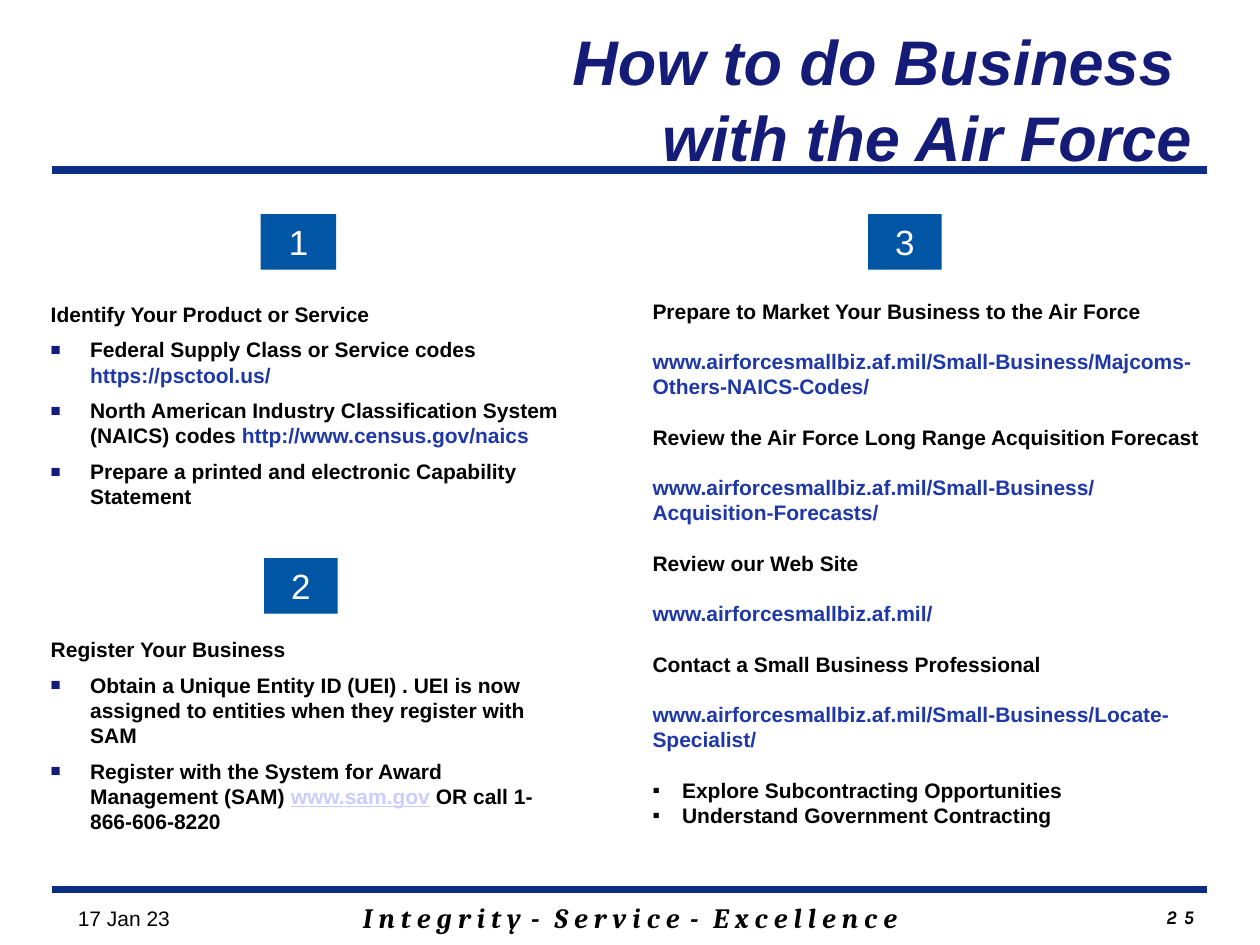
"""Build the "How to do Business with the Air Force" slide."""
from lxml.etree import SubElement
from pptx import Presentation
from pptx.dml.color import RGBColor
from pptx.enum.shapes import MSO_CONNECTOR as CONN, MSO_SHAPE as SHAPE
from pptx.enum.text import MSO_ANCHOR as ANCHOR, MSO_AUTO_SIZE as AUTO, PP_ALIGN as ALIGN
from pptx.oxml.ns import qn
from pptx.util import Pt

COLORS = {"navy": "151C77", "rule": "0C2D83", "box": "0055A5", "link": "1E38A8",
          "pale": "CCCCFF", "black": "000000", "white": "FFFFFF"}


def rgb(name):
    return RGBColor.from_string(COLORS[name])


class Deck:
    font = "Arial"
    size = 12

    def __init__(self, slide):
        self.slide = slide

    def style(self, r, size=None, color="black", font=None, bold=False, italic=False,
              underline=False, spacing=0):
        f = r.font
        f.name, f.size = font or self.font, Pt(size or self.size)
        f.bold, f.italic = bold, italic
        f.color.rgb = rgb(color)
        if underline:
            f.underline = True
        if spacing:
            r._r.get_or_add_rPr().set("spc", str(int(spacing * 100)))

    def title(self, text, x, y, w, h):
        sp = self.slide.shapes.title
        sp.left, sp.top, sp.width, sp.height = map(Pt, (x, y, w, h))
        tf = sp.text_frame
        tf.text = text
        tf.auto_size, tf.vertical_anchor = AUTO.NONE, ANCHOR.MIDDLE
        p = tf.paragraphs[0]
        p.alignment = ALIGN.RIGHT
        for r in p.runs:
            self.style(r, 36, "navy", bold=True, italic=True)

    def rule(self, y, x1=30, x2=690):
        cx = self.slide.shapes.add_connector(CONN.STRAIGHT, Pt(x1), Pt(y), Pt(x2), Pt(y))
        cx.line.color.rgb, cx.line.width = rgb("rule"), Pt(4.5)
        SubElement(cx._element.spPr, qn("a:effectLst"))

    def frame(self, x, y, w, h, wrap=True, inset=None):
        tf = self.slide.shapes.add_textbox(*map(Pt, (x, y, w, h))).text_frame
        tf.word_wrap = wrap
        if inset:
            tf.margin_left = tf.margin_right = Pt(inset[0])
            tf.margin_top = tf.margin_bottom = Pt(inset[1])
        return tf

    def label(self, runs, x, y, w, h, align=ALIGN.CENTER, wrap=True):
        p = self.frame(x, y, w, h, wrap).paragraphs[0]
        p.alignment = align
        for text, look in runs:
            r = p.add_run()
            r.text = text
            self.style(r, **look)

    def number(self, text, x, y, w=42, h=31.7):
        sp = self.slide.shapes.add_shape(SHAPE.RECTANGLE, *map(Pt, (x, y, w, h)))
        sp.shadow.inherit = False
        sp.fill.solid()
        sp.fill.fore_color.rgb = rgb("box")
        sp.line.fill.background()
        sp.text_frame.text = text
        p = sp.text_frame.paragraphs[0]
        p.alignment = ALIGN.CENTER
        self.style(p.runs[0], 20, "white")

    def bullet(self, p, char, indent, color=None, percent=None):
        pPr = p._p.get_or_add_pPr()
        pPr.set("marL", str(Pt(indent)))
        pPr.set("indent", str(-Pt(indent)))
        if color:
            SubElement(SubElement(pPr, qn("a:buClr")), qn("a:srgbClr")).set("val", COLORS[color])
        if percent:
            SubElement(pPr, qn("a:buSzPct")).set("val", str(percent * 1000))
        SubElement(pPr, qn("a:buFont")).set("typeface", self.font)
        SubElement(pPr, qn("a:buChar")).set("char", char)

    def paragraph(self, tf, runs, gap=0, **bullet):
        first = not tf.paragraphs[0].runs
        p = tf.paragraphs[0] if first else tf.add_paragraph()
        if bullet:
            self.bullet(p, **bullet)
        if not first:
            p.space_before = Pt(gap)
        for text, color in runs:
            r = p.add_run()
            r.text = text
            self.style(r, color=color, bold=True, underline=color == "pale")

    def step(self, heading, items, x, y, w, h):
        tf = self.frame(x, y, w, h, inset=(5, 2.9))
        self.paragraph(tf, [(heading, "black")])
        for runs in items:
            self.paragraph(tf, runs, 6, char="■", indent=22.5, color="navy", percent=80)

    def marketing(self, pairs, points, x, y, w, h, gap=14.4):
        tf = self.frame(x, y, w, h)
        for heading, link in pairs:
            self.paragraph(tf, [(heading, "black")], gap)
            self.paragraph(tf, [(link, "link")], gap)
        for i, text in enumerate(points):
            self.paragraph(tf, [(text, "black")], 0 if i else gap, char="▪", indent=16.9)


def main():
    prs = Presentation()
    prs.slide_width, prs.slide_height = Pt(720), Pt(540)
    s = Deck(prs.slides.add_slide(prs.slide_layouts[5]))

    for y in (508.3, 97.2):
        s.rule(y)
    s.title("How to do Business \vwith the Air Force", 90, 13, 598.3, 86.4)

    motto = dict(size=16, font="Cambria", bold=True, italic=True)
    dash = (" - ", dict(motto, spacing=2.4))
    s.label([("I n t e g r i t y", motto), dash, ("S e r v i c e", motto), dash,
             ("E x c e l l e n c e", motto)], 30, 511.2, 660, 26.6)
    s.label([("25", dict(size=11, font="Karla", bold=True, italic=True, spacing=4))],
            629.3, 514, 90, 23.8)
    s.label([("17 Jan 23", {})], 37.4, 514, 67.7, 21.6, ALIGN.LEFT, wrap=False)

    site = "www.airforcesmallbiz.af.mil/"
    s.marketing(
        [("Prepare to Market Your Business to the Air Force",
          site + "Small-Business/Majcoms-Others-NAICS-Codes/"),
         ("Review the Air Force Long Range Acquisition Forecast",
          site + "Small-Business/Acquisition-Forecasts/"),
         ("Review our Web Site", site),
         ("Contact a Small Business Professional",
          site + "Small-Business/Locate-Specialist/")],
        ["Explore Subcontracting Opportunities", "Understand Government Contracting"],
        365.8, 167, 329, 312.5)

    s.step("Identify Your Product or Service", [
        [("Federal Supply Class or Service codes ", "black"), ("https://psctool.us/", "link")],
        [("North American Industry Classification System (NAICS) codes ", "black"),
         ("http://www.census.gov/naics", "link")],
        [("Prepare a printed and electronic Capability Statement", "black")],
    ], 24, 169.2, 323.3, 142.6)
    s.step("Register Your Business", [
        [("Obtain a Unique Entity ID (UEI) . UEI is now assigned to entities "
          "when they register with SAM", "black")],
        [("Register with the System for Award Management (SAM) ", "black"),
         ("www.sam.gov", "pale"), (" OR call 1-866-606-8220", "black")],
    ], 24, 360.7, 308.9, 142.6)

    s.number("1", 149, 122.4, 43.2)
    s.number("3", 496.1, 122.4)
    s.number("2", 151, 319)
    prs.save("out.pptx")


if __name__ == "__main__":
    main()
